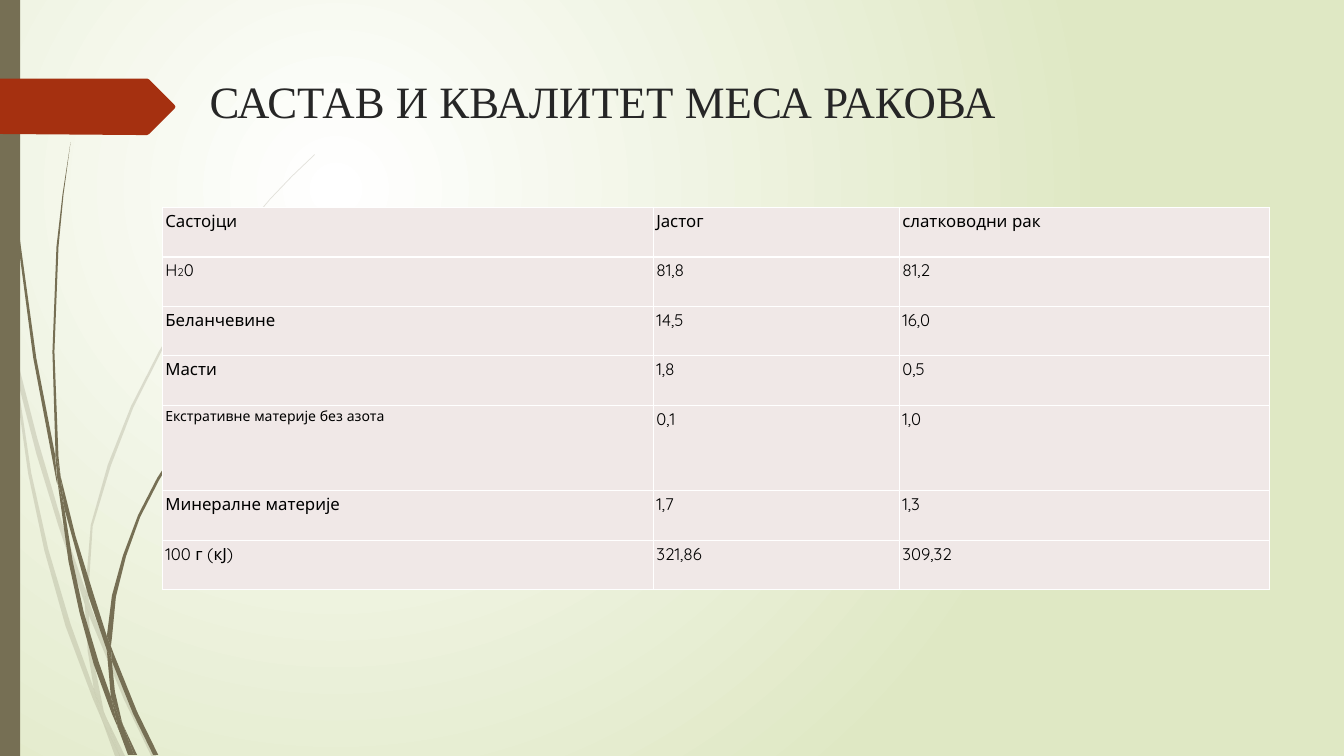
from lxml import etree
from pptx import Presentation
from pptx.dml.color import RGBColor
from pptx.enum.shapes import MSO_SHAPE
from pptx.enum.text import MSO_ANCHOR, PP_ALIGN
from pptx.oxml import parse_xml
from pptx.oxml.ns import nsdecls, qn
from pptx.util import Emu, Pt

GRID = 9144  # one grid step is a hundredth of an inch
WIDTH, HEIGHT = 1333, 750
OLIVE, RUST, INK, CELL = "766F54", "A53010", "262626", "F0E8E7"

# Grass blades: outline points in grid steps
PALE_BLADES = [
    [(11, 350), (9, 322), (0, 282), (0, 299), (10, 344)],
    [(58, 522), (84, 599), (85, 586), (62, 520), (37, 435), (14, 345), (17, 376), (36, 450)],
    [(92, 607), (88, 596), (88, 610), (123, 694), (150, 750), (155, 750), (127, 692)],
    [(119, 750), (124, 750), (105, 711)],
    [(93, 683), (70, 619), (48, 545), (31, 469), (17, 376), (11, 350), (28, 470), (44, 546),
     (65, 621), (92, 693), (101, 714), (99, 707)],
    [(84, 599), (87, 646), (93, 683), (96, 692), (105, 711), (103, 706), (91, 646), (88, 610),
     (88, 608)],
    [(88, 584), (92, 522), (110, 462), (132, 405), (160, 349), (193, 296), (229, 245), (268, 198),
     (290, 175), (312, 154), (312, 153), (289, 175), (268, 197), (228, 244), (191, 295),
     (158, 348), (130, 403), (107, 461), (90, 521), (85, 584), (85, 586), (88, 596)],
    [(101, 714), (114, 750), (119, 750)],
    [(88, 608), (88, 610), (88, 596), (85, 586), (84, 599)],
    [(96, 692), (93, 683), (99, 707), (101, 714), (119, 750), (105, 711)],
]
DARK_BLADES = [
    [(7, 110), (17, 233), (33, 355), (56, 477), (57, 481), (55, 457), (55, 453), (36, 355),
     (19, 232), (8, 109), (5, 48), (4, 0), (3, 0), (4, 48)],
    [(88, 592), (106, 645), (106, 633), (106, 631), (93, 590), (75, 532), (60, 472), (64, 505)],
    [(113, 649), (110, 641), (111, 656), (132, 708), (152, 749), (157, 749), (136, 706)],
    [(110, 691), (98, 657), (83, 607), (72, 556), (64, 505), (57, 477), (68, 557), (79, 608),
     (93, 659), (111, 708), (117, 722), (116, 717)],
    [(60, 472), (58, 453), (54, 349), (58, 245), (63, 193), (70, 141), (62, 193), (56, 245),
     (52, 349), (55, 449)],
    [(133, 749), (136, 749), (122, 719)],
    [(57, 477), (64, 505), (60, 472), (55, 449), (55, 453)],
    [(111, 633), (115, 592), (125, 552), (139, 513), (158, 476), (180, 440), (205, 406),
     (231, 374), (245, 359), (261, 344), (260, 344), (245, 358), (231, 373), (204, 405),
     (179, 439), (156, 474), (137, 511), (122, 551), (111, 591), (106, 631), (110, 641)],
    [(117, 722), (127, 749), (131, 749)],
    [(106, 645), (110, 691), (116, 706), (122, 719), (121, 716), (114, 686), (111, 656),
     (109, 651)],
    [(106, 645), (109, 651), (111, 656), (110, 641), (106, 631)],
    [(116, 706), (110, 691), (116, 717), (117, 722), (130, 749), (133, 749), (122, 719)],
]
ARROW = [(0, 78), (146, 78), (148, 79), (173, 104), (174, 106), (173, 108), (148, 133),
         (146, 134), (136, 134), (0, 133)]

# Composition table
COLUMNS = [487, 244, 367]
ROWS = [49, 49, 49, 49, 85, 49, 49]
COMPOSITION = [
    ["Састојци", "Јастог", "слатководни рак"],
    [[("H", 12), ("2", 8), ("0", 12)], "81,8", "81,2"],
    ["Беланчевине", "14,5", "16,0"],
    ["Масти", "1,8", "0,5"],
    [[("Екстративне материје без азота", 10)], "0,1", "1,0"],
    ["Минералне материје", "1,7", "1,3"],
    ["100 г (кЈ)", "321,86", "309,32"],
]


def grid(steps):
    return Emu(steps * GRID)


def color(value):
    return RGBColor.from_string(value)


def paint(sp, fill, alpha=None):
    sp.shadow.inherit = False
    sp.fill.solid()
    sp.fill.fore_color.rgb = color(fill)
    sp.line.fill.background()
    if alpha is not None:
        rgb = sp.fill._xPr.find(qn("a:solidFill"))[0]
        etree.SubElement(rgb, qn("a:alpha"), val=str(alpha * 1000))


def add_outline(s, points, fill, alpha=None):
    builder = s.shapes.build_freeform(*points[0], scale=GRID)
    builder.add_line_segments(points[1:], close=True)
    paint(builder.convert_to_shape(), fill, alpha)


def add_run(p, text, size, font, ink):
    r = p.add_run()
    r.text = text
    r.font.size = Pt(size)
    r.font.name = font
    r.font.color.rgb = color(ink)


def set_background(s):
    s.background.fill.gradient()
    bg = s.background.fill._xPr
    bg.replace(bg.find(qn("a:gradFill")), parse_xml(
        f'<a:gradFill rotWithShape="1" {nsdecls("a")}><a:gsLst>'
        '<a:gs pos="0"><a:srgbClr val="FFFFFF"/></a:gs>'
        '<a:gs pos="100000"><a:srgbClr val="DFE8C4"/></a:gs></a:gsLst>'
        '<a:path path="circle"><a:fillToRect l="50000" t="50000" r="100000" b="100000"/>'
        '</a:path></a:gradFill>'))


def add_title(s, text):
    tf = s.shapes.add_textbox(grid(198), grid(68), grid(1060), grid(56)).text_frame
    tf.word_wrap = True
    tf.vertical_anchor = MSO_ANCHOR.TOP
    add_run(tf.paragraphs[0], text, 32, "Times New Roman", INK)


def fill_cell(cell, content):
    cell.margin_left = cell.margin_right = grid(3)
    cell.margin_top = cell.margin_bottom = 0
    p = cell.text_frame.paragraphs[0]
    p.alignment = PP_ALIGN.JUSTIFY
    p.line_spacing = 1.15
    for text, size in [(content, 12)] if isinstance(content, str) else content:
        add_run(p, text, size, "Quicksand", "000000")
    # Borders come before the fill in the cell properties
    tc_pr = cell._tc.get_or_add_tcPr()
    for side in ("lnL", "lnR", "lnT", "lnB"):
        tc_pr.append(parse_xml(
            f'<a:{side} w="12700" {nsdecls("a")}><a:solidFill>'
            f'<a:srgbClr val="FFFFFF"/></a:solidFill></a:{side}>'))
    cell.fill.solid()
    cell.fill.fore_color.rgb = color(CELL)


def add_composition_table(s):
    table = s.shapes.add_table(len(ROWS), len(COLUMNS), grid(161), grid(206),
                               grid(sum(COLUMNS)), grid(sum(ROWS))).table
    for column, width in zip(table.columns, COLUMNS):
        column.width = grid(width)
    for row, height, contents in zip(table.rows, ROWS, COMPOSITION):
        row.height = grid(height)
        for cell, content in zip(row.cells, contents):
            fill_cell(cell, content)


def main():
    prs = Presentation()
    prs.slide_width, prs.slide_height = grid(WIDTH), grid(HEIGHT)
    s = prs.slides.add_slide(prs.slide_layouts[6])
    set_background(s)

    # Grass, side bar and arrow
    for blade in PALE_BLADES:
        add_outline(s, blade, OLIVE, 20)
    for blade in DARK_BLADES:
        add_outline(s, blade, OLIVE)
    bar = s.shapes.add_shape(MSO_SHAPE.RECTANGLE, 0, 0, grid(20), grid(HEIGHT))
    paint(bar, OLIVE)
    add_outline(s, ARROW, RUST)

    # Content
    add_title(s, "САСТАВ И КВАЛИТЕТ МЕСА РАКОВА")
    add_composition_table(s)
    prs.save("out.pptx")


if __name__ == "__main__":
    main()
